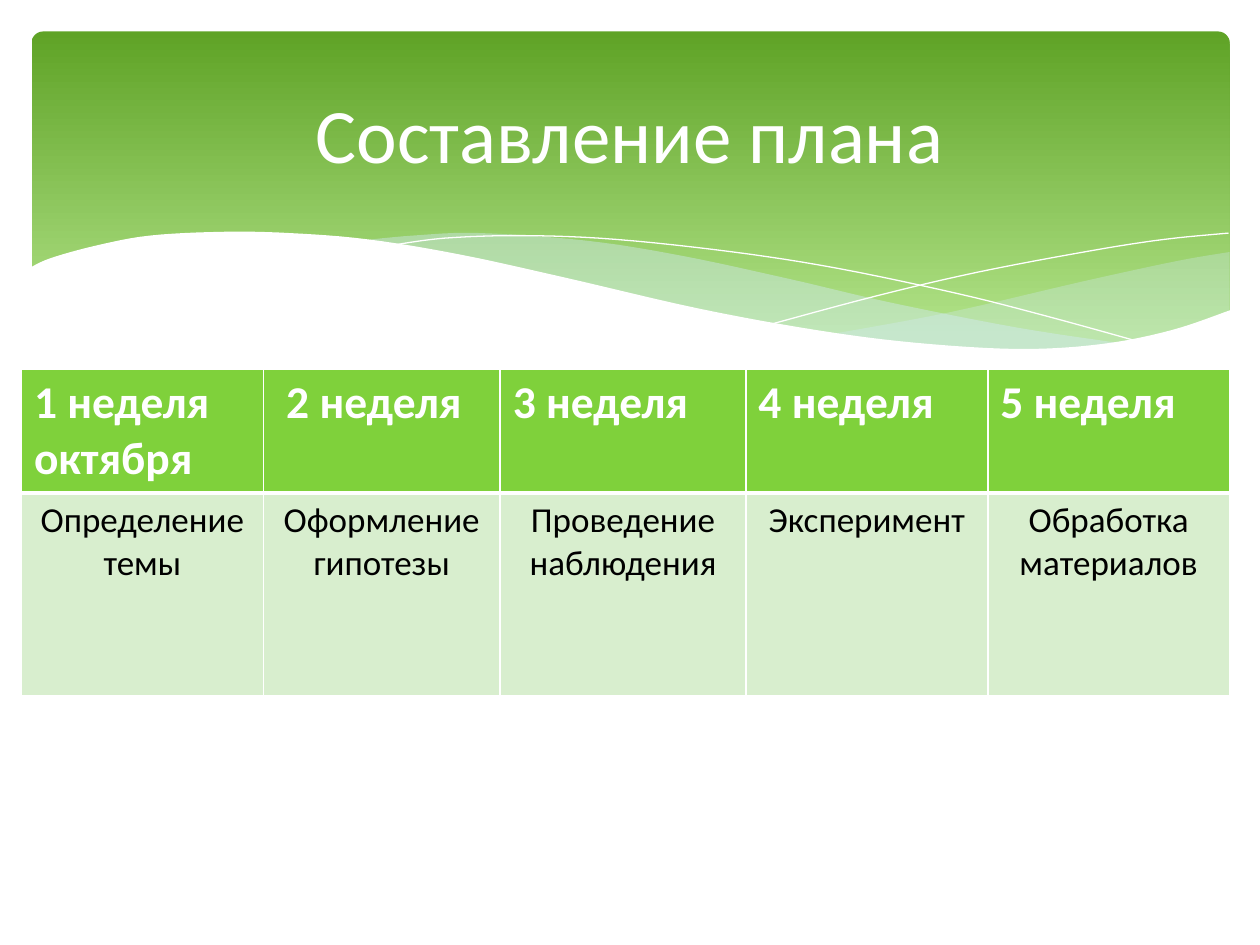
from dataclasses import dataclass
from typing import Optional

import pptx
import pptx.util
from pptx.dml.color import RGBColor
from pptx.enum.shapes import MSO_SHAPE
from pptx.enum.text import MSO_ANCHOR, PP_ALIGN
from pptx.oxml.ns import qn
from pptx.util import Inches
from lxml import etree

WHITE = RGBColor(0xFF, 0xFF, 0xFF)
BLACK = RGBColor(0, 0, 0)
DARK = RGBColor(0x5F, 0xA3, 0x26)
LIGHT = RGBColor(0xB2, 0xE3, 0x89)
ICE = RGBColor(0xD6, 0xEC, 0xFF)
GREEN = RGBColor(0x7F, 0xD1, 0x3B)
PALE = RGBColor(0xD8, 0xEE, 0xCE)
FONT = "Calibri"
STEPS = 6

Point = tuple[float, float]


@dataclass
class Wave:
    """Smooth edges joined at corners; without a fill it is an open line."""
    edges: list[list[Point]]
    fill: Optional[RGBColor] = None
    alpha: int = 100


@dataclass
class Week:
    name: str
    task: str
    width: float


@dataclass
class Row:
    height: float
    size: int
    bold: bool
    color: RGBColor
    fill: RGBColor
    align: PP_ALIGN
    top: int
    bottom: int


WAVES = [
    Wave([[(9.76, 2), (9.35, 2.07), (8.61, 2.23), (7.53, 2.48), (6.61, 2.65)],
          [(6.61, 2.65), (7.19, 2.72), (8.03, 2.78), (8.81, 2.73),
           (9.35, 2.62), (9.76, 2.47)]], ICE, 29),
    Wave([[(8.93, 2.73), (8.07, 2.6), (7.06, 2.4), (6.29, 2.22), (5.41, 2.03),
           (4.65, 1.91), (3.8, 1.85), (3.28, 1.87), (2.86, 1.91)],
          [(2.86, 1.91), (3.62, 2.03), (4.49, 2.22), (5.66, 2.48), (6.5, 2.64),
           (7.22, 2.74), (7.96, 2.78), (8.48, 2.77), (8.93, 2.73)]], ICE, 40),
    Wave([[(3.09, 1.95), (3.53, 1.89), (4.16, 1.87), (4.89, 1.9), (5.82, 2),
           (6.65, 2.13), (7.6, 2.33), (8.31, 2.51), (9.07, 2.72)]]),
    Wave([[(6.13, 2.57), (6.95, 2.35), (7.76, 2.16), (8.66, 1.99),
           (9.24, 1.9), (9.75, 1.85)]]),
    Wave([[(9.77, 2.46), (9.3, 2.62), (8.75, 2.73), (8.09, 2.77), (7.26, 2.72),
           (6.48, 2.62), (5.55, 2.45), (4.47, 2.2), (3.65, 2.02), (2.92, 1.9),
           (2.3, 1.85), (1.77, 1.84), (1.19, 1.87), (0.76, 1.95),
           (0.4, 2.05), (0.23, 2.13)],
          [(0.23, 3.29), (9.77, 3.29)]], WHITE),
]

WEEKS = [
    Week("1 неделя октября", "Определение\nтемы", 1.92),
    Week(" 2 неделя", "Оформление гипотезы", 1.88),
    Week("3 неделя", "Проведение наблюдения", 1.95),
    Week("4 неделя", "Эксперимент", 1.92),
    Week("5 неделя", "Обработка материалов", 1.92),
]

ROWS = [
    Row(0.97, 26, True, WHITE, GREEN, PP_ALIGN.LEFT, 1, 3),
    Row(1.61, 20, False, BLACK, PALE, PP_ALIGN.CENTER, 3, 1),
]


def smooth(knots: list[Point]) -> list[Point]:
    """Return points of a Catmull-Rom curve through the knots."""
    if len(knots) < 3:
        return knots
    ends = [knots[0], *knots, knots[-1]]
    points = [knots[0]]
    for a, b, c, d in zip(ends, ends[1:], ends[2:], ends[3:]):
        for step in range(1, STEPS + 1):
            t = step / STEPS
            points.append(tuple(
                q + t * (r - p + t * (2 * p - 5 * q + 4 * r - s
                                      + t * (3 * q - p - 3 * r + s))) / 2
                for p, q, r, s in zip(a, b, c, d)))
    return points


def draw_band(slide) -> None:
    band = slide.shapes.add_shape(MSO_SHAPE.ROUNDED_RECTANGLE, Inches(0.25),
                                  Inches(0.25), Inches(9.51), Inches(2.7))
    band.adjustments[0] = 0.034
    band.shadow.inherit = False
    band.line.fill.background()
    band.fill.gradient()
    band.fill.gradient_angle = 270
    for stop, color, place in zip(band.fill.gradient_stops, (DARK, LIGHT), (0, 0.9)):
        stop.color.rgb = color
        stop.position = place


def draw_wave(slide, wave: Wave) -> None:
    points = [(Inches(x), Inches(y)) for edge in wave.edges for x, y in smooth(edge)]
    pen = slide.shapes.build_freeform(*points[0])
    pen.add_line_segments(points[1:], close=wave.fill is not None)
    shape = pen.convert_to_shape()
    shape.shadow.inherit = False
    if wave.fill is None:
        shape.fill.background()
        shape.line.color.rgb = WHITE
        shape.line.width = pptx.util.Pt(0)
        return
    shape.line.fill.background()
    shape.fill.solid()
    shape.fill.fore_color.rgb = wave.fill
    if wave.alpha < 100:
        color = shape._element.spPr.find(qn("a:solidFill"))[0]
        etree.SubElement(color, qn("a:alpha"), val=str(wave.alpha * 1000))


def set_border(cell, side: str, width: int) -> None:
    line = etree.SubElement(cell._tc.get_or_add_tcPr(), qn(f"a:ln{side}"),
                            w=str(pptx.util.Pt(width)))
    fill = etree.SubElement(line, qn("a:solidFill"))
    etree.SubElement(fill, qn("a:srgbClr"), val=str(WHITE))


def fill_cell(cell, text: str, row: Row) -> None:
    for side, width in zip("LRTB", (1, 1, row.top, row.bottom)):
        set_border(cell, side, width)
    cell.fill.solid()
    cell.fill.fore_color.rgb = row.fill
    cell.text = text
    for par in cell.text_frame.paragraphs:
        par.alignment = row.align
        style(par.font, row.size, row.color, row.bold)


def style(font, size: int, color: RGBColor, bold: bool = False) -> None:
    font.name = FONT
    font.size = pptx.util.Pt(size)
    font.bold = bold
    font.color.rgb = color


def draw_plan(slide) -> None:
    wide = sum(week.width for week in WEEKS)
    high = sum(row.height for row in ROWS)
    table = slide.shapes.add_table(len(ROWS), len(WEEKS), Inches(0.17), Inches(2.93),
                                   Inches(wide), Inches(high)).table
    table.horz_banding = False
    for r, row in enumerate(ROWS):
        table.rows[r].height = Inches(row.height)
        for c, week in enumerate(WEEKS):
            table.columns[c].width = Inches(week.width)
            fill_cell(table.cell(r, c), (week.name, week.task)[r], row)


def draw_title(slide) -> None:
    box = slide.shapes.add_textbox(Inches(0.5), Inches(0.37), Inches(9), Inches(1.37))
    frame = box.text_frame
    frame.word_wrap = True
    frame.vertical_anchor = MSO_ANCHOR.MIDDLE
    par = frame.paragraphs[0]
    par.text = "Составление плана"
    par.alignment = PP_ALIGN.CENTER
    style(par.font, 44, WHITE)


def main() -> None:
    deck = pptx.Presentation()
    deck.slide_width, deck.slide_height = Inches(10), Inches(7.5)
    slide = deck.slides.add_slide(deck.slide_layouts[6])
    draw_band(slide)
    for wave in WAVES:
        draw_wave(slide, wave)
    draw_plan(slide)
    draw_title(slide)
    deck.save("out.pptx")


if __name__ == "__main__":
    main()
